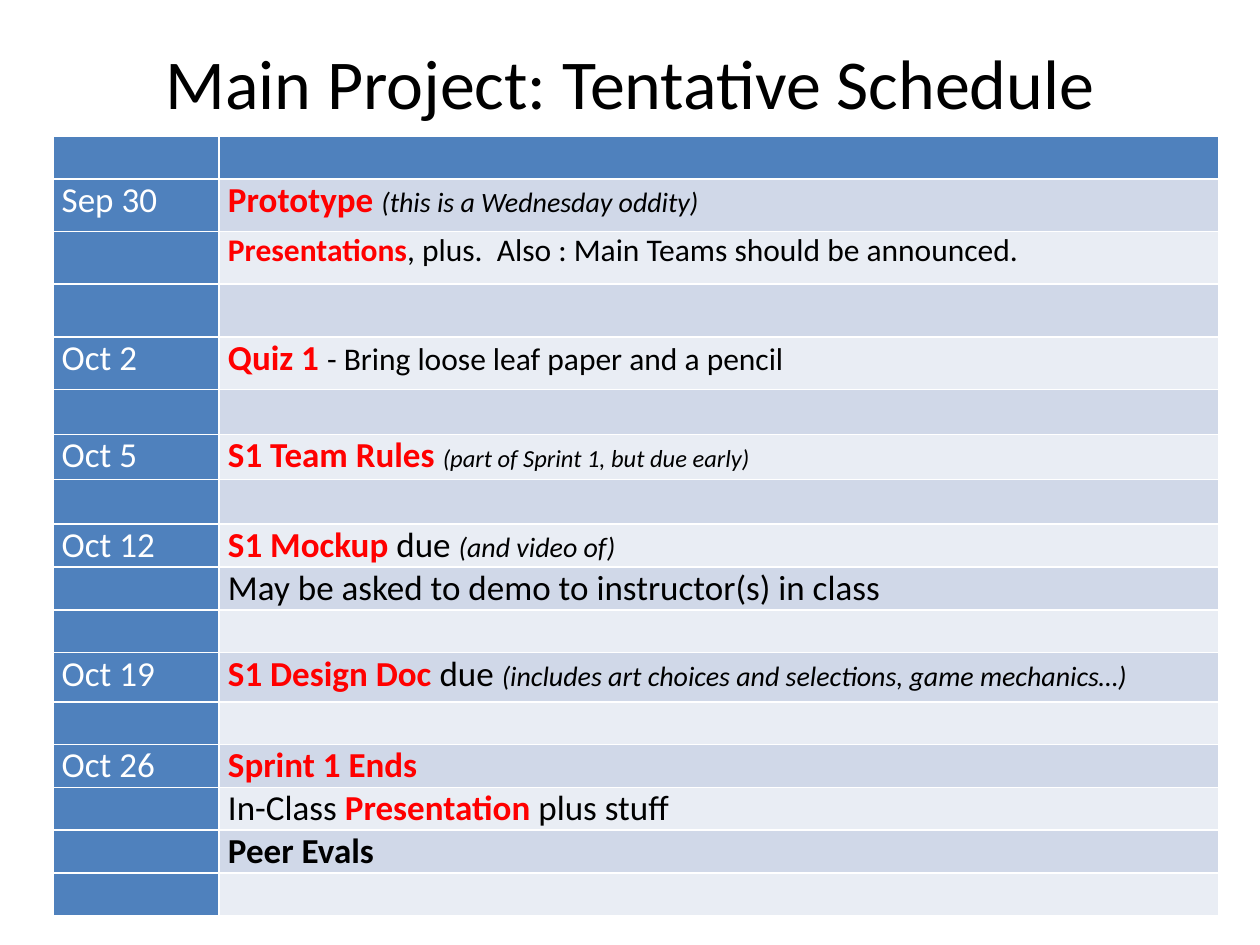
from dataclasses import dataclass

import pptx
import pptx.dml.color
import pptx.enum.text
import pptx.util


@dataclass(frozen=True)
class Theme:
    font: str = "Calibri"
    ink: str = "000000"
    white: str = "FFFFFF"
    alert: str = "FF0000"
    header: str = "4F81BD"
    bands: tuple = ("E9EDF4", "D0D8E8")
    title_size: int = 40
    body_size: int = 20
    detail_size: int = 18
    note_size: int = 16
    small_size: int = 14


THEME = Theme()
GRID_COLUMNS, GRID_ROWS = 100, 75


@dataclass(frozen=True)
class Span:
    text: str
    size: int = THEME.body_size
    color: str = THEME.ink
    bold: bool = False
    italic: bool = False


def key(text, size=THEME.body_size):
    return Span(text, size, THEME.alert, bold=True)


def note(text, size=THEME.note_size):
    return Span(text, size, italic=True)


def detail(text):
    return Span(text, THEME.detail_size)


SHORT, MEDIUM, LARGE, TALL = 3.4, 3.57, 3.9, 4.18
SCHEDULE = [
    (SHORT, "", []),
    (TALL, "Sep 30", [key("Prototype "), note("(this is a Wednesday oddity)")]),
    (TALL, "", [key("Presentations", THEME.detail_size),
                detail(", plus.  Also : Main Teams should be announced.")]),
    (TALL, "", []),
    (TALL, "Oct 2", [key("Quiz 1 "), detail("- Bring loose leaf paper and a pencil")]),
    (MEDIUM, "", []),
    (MEDIUM, "Oct 5", [key("S1 Team Rules "),
                       note("(part of Sprint 1, but due early)", THEME.small_size)]),
    (MEDIUM, "", []),
    (SHORT, "Oct 12", [key("S1 Mockup"), Span(" due "), note("(and video of)")]),
    (SHORT, "", [Span("May be asked to demo to instructor(s) in class")]),
    (SHORT, "", []),
    (LARGE, "Oct 19", [key("S1 Design Doc"), Span(" due "),
                       note("(includes art choices and selections, game mechanics…)")]),
    (SHORT, "", []),
    (SHORT, "Oct 26", [key("Sprint 1 Ends")]),
    (SHORT, "", [Span("In-Class "), key("Presentation "), Span("plus stuff")]),
    (SHORT, "", [Span("Peer Evals", bold=True)]),
    (SHORT, "", []),
]


class SlideBuilder:
    def __init__(self, presentation, theme):
        self.theme = theme
        self.column = presentation.slide_width / GRID_COLUMNS
        self.row = presentation.slide_height / GRID_ROWS
        self.slide = presentation.slides.add_slide(presentation.slide_layouts[6])

    def box(self, left, top, width, height):
        return (round(left * self.column), round(top * self.row),
                round(width * self.column), round(height * self.row))

    def add_spans(self, paragraph, spans):
        paragraph.font.name = self.theme.font
        for span in spans:
            run = paragraph.add_run()
            run.text = span.text
            run.font.name = self.theme.font
            run.font.size = pptx.util.Pt(span.size)
            run.font.bold = span.bold
            run.font.italic = span.italic
            run.font.color.rgb = pptx.dml.color.RGBColor.from_string(span.color)

    def title(self, text, *area):
        frame = self.slide.shapes.add_textbox(*self.box(*area)).text_frame
        frame.word_wrap = True
        frame.vertical_anchor = pptx.enum.text.MSO_ANCHOR.MIDDLE
        paragraph = frame.paragraphs[0]
        paragraph.alignment = pptx.enum.text.PP_ALIGN.CENTER
        self.add_spans(paragraph, [Span(text, self.theme.title_size)])

    def cell(self, cell, spans, fill):
        cell.margin_left = cell.margin_right = pptx.util.Inches(0.07)
        cell.margin_top = cell.margin_bottom = 0
        cell.fill.solid()
        cell.fill.fore_color.rgb = pptx.dml.color.RGBColor.from_string(fill)
        self.add_spans(cell.text_frame.paragraphs[0], spans)

    def schedule(self, entries, left, top, widths):
        total = sum(height for height, _, _ in entries)
        area = self.box(left, top, sum(widths), total)
        table = self.slide.shapes.add_table(len(entries), len(widths), *area).table
        for column, width in zip(table.columns, widths):
            column.width = round(width * self.column)
        for index, (height, date, spans) in enumerate(entries):
            table.rows[index].height = round(height * self.row)
            dates = [Span(date, color=self.theme.white)] if date else []
            fill = self.theme.bands[index % 2] if index else self.theme.header
            self.cell(table.cell(index, 0), dates, self.theme.header)
            self.cell(table.cell(index, 1), spans, fill)


def main():
    presentation = pptx.Presentation()
    presentation.slide_width = pptx.util.Inches(10)
    presentation.slide_height = pptx.util.Inches(7.5)
    builder = SlideBuilder(presentation, THEME)
    builder.title("Main Project: Tentative Schedule", 5, 3, 90, 7)
    builder.schedule(SCHEDULE, 4.2, 10.8, (13.2, 79.3))
    presentation.save("out.pptx")


if __name__ == "__main__":
    main()
